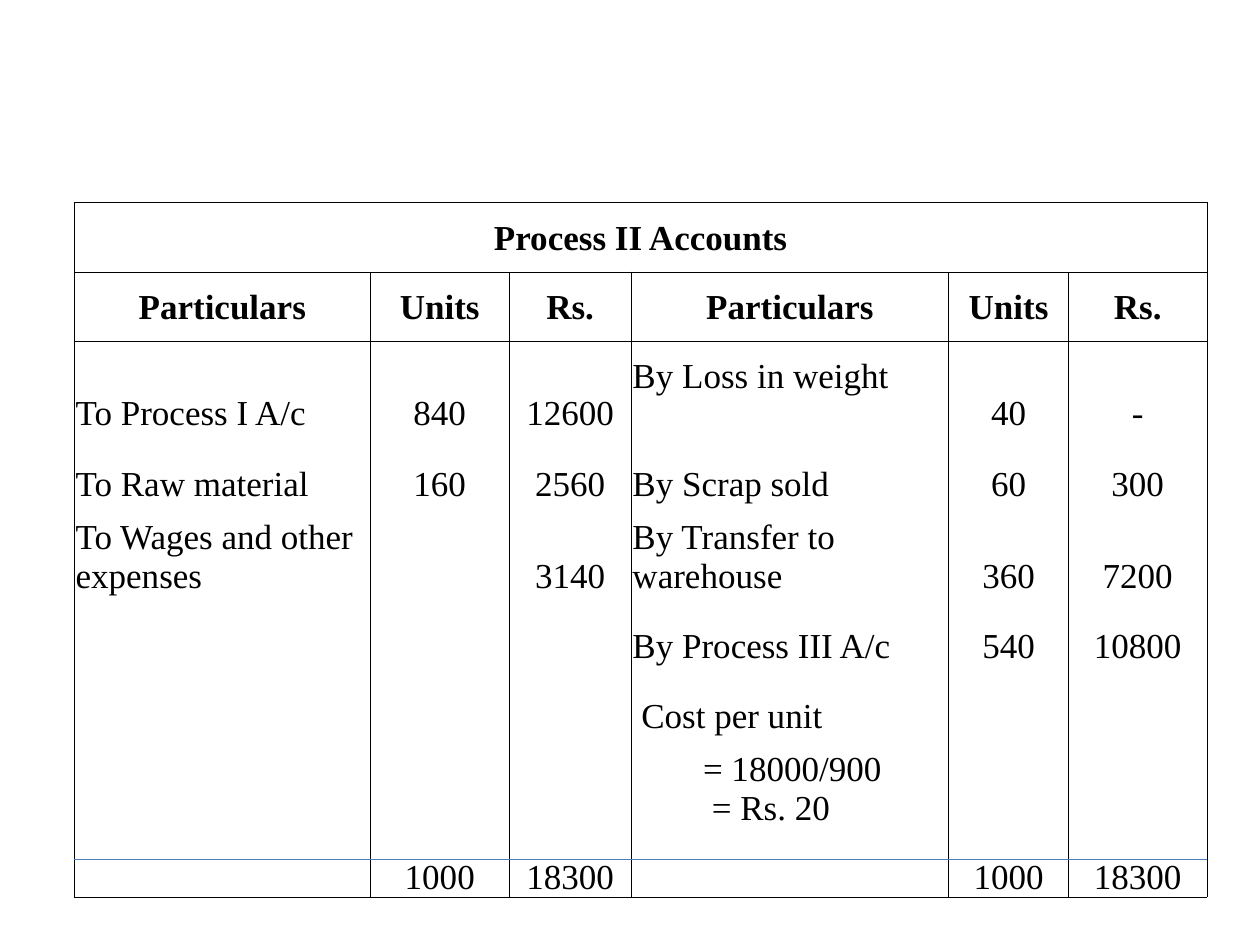
from dataclasses import dataclass

from lxml import etree
from pptx import Presentation
from pptx.dml.color import RGBColor
from pptx.enum.shapes import MSO_CONNECTOR
from pptx.enum.text import MSO_ANCHOR, PP_ALIGN
from pptx.oxml.ns import qn
from pptx.util import Inches, Pt

LEFT, CENTER = PP_ALIGN.LEFT, PP_ALIGN.CENTER
MIDDLE, BOTTOM = MSO_ANCHOR.MIDDLE, MSO_ANCHOR.BOTTOM
STRAIGHT = MSO_CONNECTOR.STRAIGHT


@dataclass(frozen=True)
class Theme:
    font: str = "Times New Roman"
    size: float = 20
    text: str = "000000"
    border: str = "000000"
    border_width: float = 0.5
    rule: str = "4B7EBC"
    rule_width: float = 0.75


THEME = Theme()
TABLE_LEFT, TABLE_TOP = 0.59, 1.61
COLUMNS = [2.35, 1.1, 0.97, 2.52, 0.95, 1.1]
ROWS = [0.55, 0.55, 0.73, 0.56, 0.73, 0.56, 0.55, 0.73, 0.55]
TOTAL_RULE_Y = 6.82
HEADER_ROWS = 2
TEXT_COLUMNS = (0, 3)
MARGINS = {"margin_left": 0.01, "margin_right": 0.01,
           "margin_top": 0.01, "margin_bottom": 0}

ACCOUNT = [
    ["Process II Accounts", "", "", "", "", ""],
    ["Particulars", "Units", "Rs.", "Particulars", "Units", "Rs."],
    ["To Process I A/c", "840", "12600", "By Loss in weight", "40", "-"],
    ["To Raw material", "160", "2560", "By Scrap sold", "60", "300"],
    ["To Wages and other expenses", "", "3140",
     "By Transfer to warehouse", "360", "7200"],
    ["", "", "", "By Process III A/c", "540", "10800"],
    ["", "", "", "Cost per unit", "", ""],
    ["", "", "", "= 18000/900\n= Rs. 20", "", ""],
    ["", "1000", "18300", "", "1000", "18300"],
]
INDENTS = {"Cost per unit": 0.07, "= 18000/900": 0.56, "= Rs. 20": 0.63}
RAISED = {"By Loss in weight": 0.3}


def set_borders(cell, visible):
    """Draw the sides named in visible (from L, R, T, B) and clear the others."""
    tc_pr = cell._tc.get_or_add_tcPr()
    for side in "LRTB":
        ln = etree.SubElement(tc_pr, qn(f"a:ln{side}"), w=str(Pt(THEME.border_width)))
        if side in visible:
            fill = etree.SubElement(ln, qn("a:solidFill"))
            etree.SubElement(fill, qn("a:srgbClr"), val=THEME.border)
        else:
            etree.SubElement(ln, qn("a:noFill"))


def border_sides(row):
    if row < HEADER_ROWS:
        return "LRTB"
    if row == HEADER_ROWS:
        return "LRT"
    return "LRB" if row == len(ROWS) - 1 else "LR"


def write_cell(cell, text, align, bold):
    tf = cell.text_frame
    tf.text = text
    font = {"name": THEME.font, "size": Pt(THEME.size), "bold": bold}
    for p in tf.paragraphs:
        p.alignment = align
        if p.text in INDENTS:
            p._p.get_or_add_pPr().set("marL", str(Inches(INDENTS[p.text])))
        for r in p.runs:
            for name, value in font.items():
                setattr(r.font, name, value)
            r.font.color.rgb = RGBColor.from_string(THEME.text)


def format_cell(cell, row, col, text):
    header = row < HEADER_ROWS
    cell.vertical_anchor = MIDDLE if header else BOTTOM
    for name, value in MARGINS.items():
        setattr(cell, name, Inches(value))
    if text in RAISED:
        cell.margin_bottom = Inches(RAISED[text])
    set_borders(cell, border_sides(row))
    cell.fill.background()
    align = LEFT if col in TEXT_COLUMNS and not header else CENTER
    write_cell(cell, text, align, header)


def add_account_table(s):
    frame = s.shapes.add_table(len(ROWS), len(COLUMNS), Inches(TABLE_LEFT), Inches(TABLE_TOP),
                               Inches(sum(COLUMNS)), Inches(sum(ROWS)))
    table = frame.table
    table.first_row = table.horz_banding = False
    for column, width in zip(table.columns, COLUMNS):
        column.width = Inches(width)
    for row, height in zip(table.rows, ROWS):
        row.height = Inches(height)
    for row, texts in enumerate(ACCOUNT):
        for col, text in enumerate(texts):
            format_cell(table.cell(row, col), row, col, text)
    table.cell(0, 0).merge(table.cell(0, len(COLUMNS) - 1))


def add_total_rule(s):
    y = Inches(TOTAL_RULE_Y)
    rule = s.shapes.add_connector(STRAIGHT, Inches(TABLE_LEFT), y,
                                  Inches(TABLE_LEFT + sum(COLUMNS)), y)
    rule.line.color.rgb = RGBColor.from_string(THEME.rule)
    rule.line.width = Pt(THEME.rule_width)
    etree.SubElement(rule._element.spPr, qn("a:effectLst"))


def main():
    prs = Presentation()
    prs.slide_width, prs.slide_height = Inches(10), Inches(7.5)
    s = prs.slides.add_slide(prs.slide_layouts[6])
    add_account_table(s)
    add_total_rule(s)
    prs.save("out.pptx")


if __name__ == "__main__":
    main()
